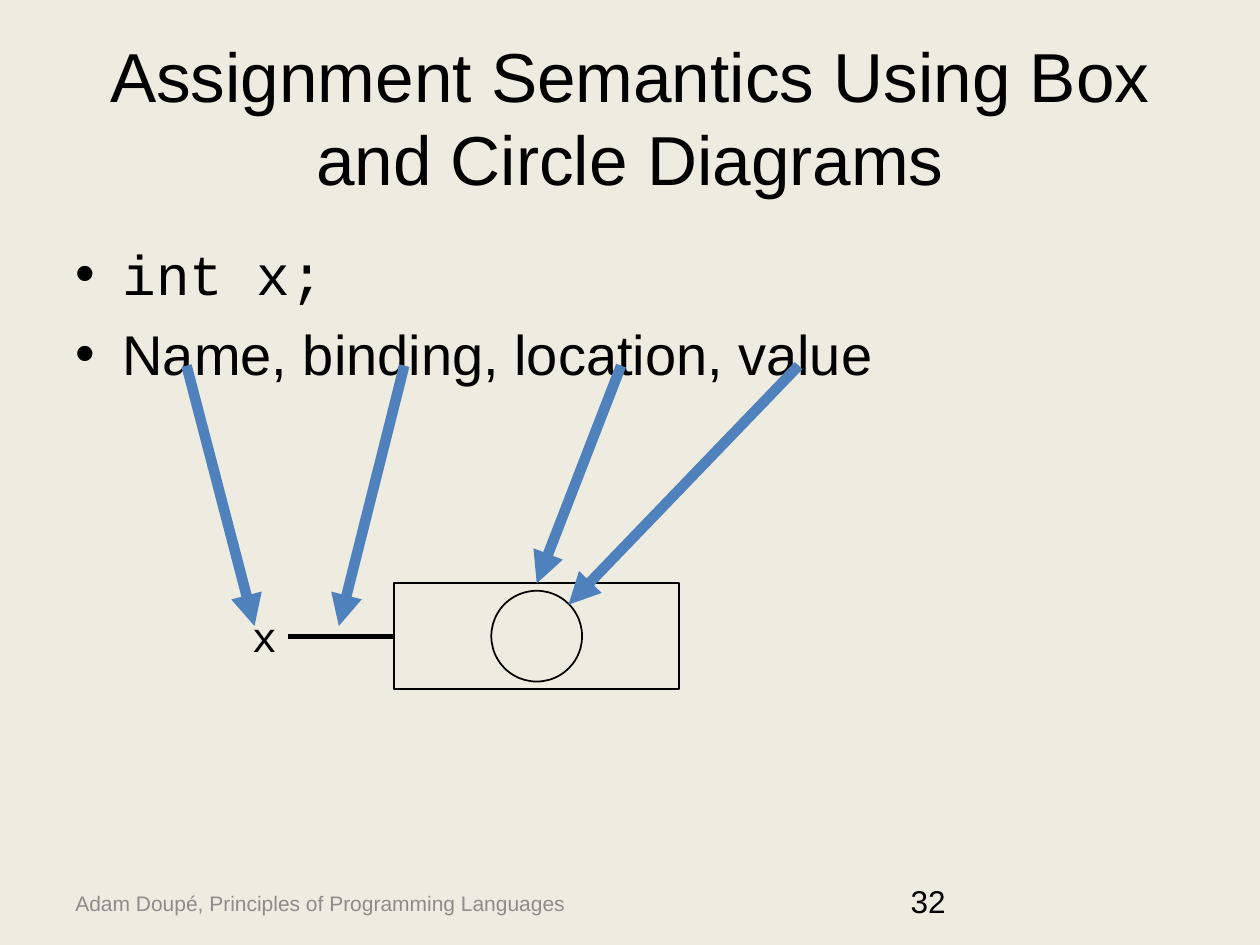
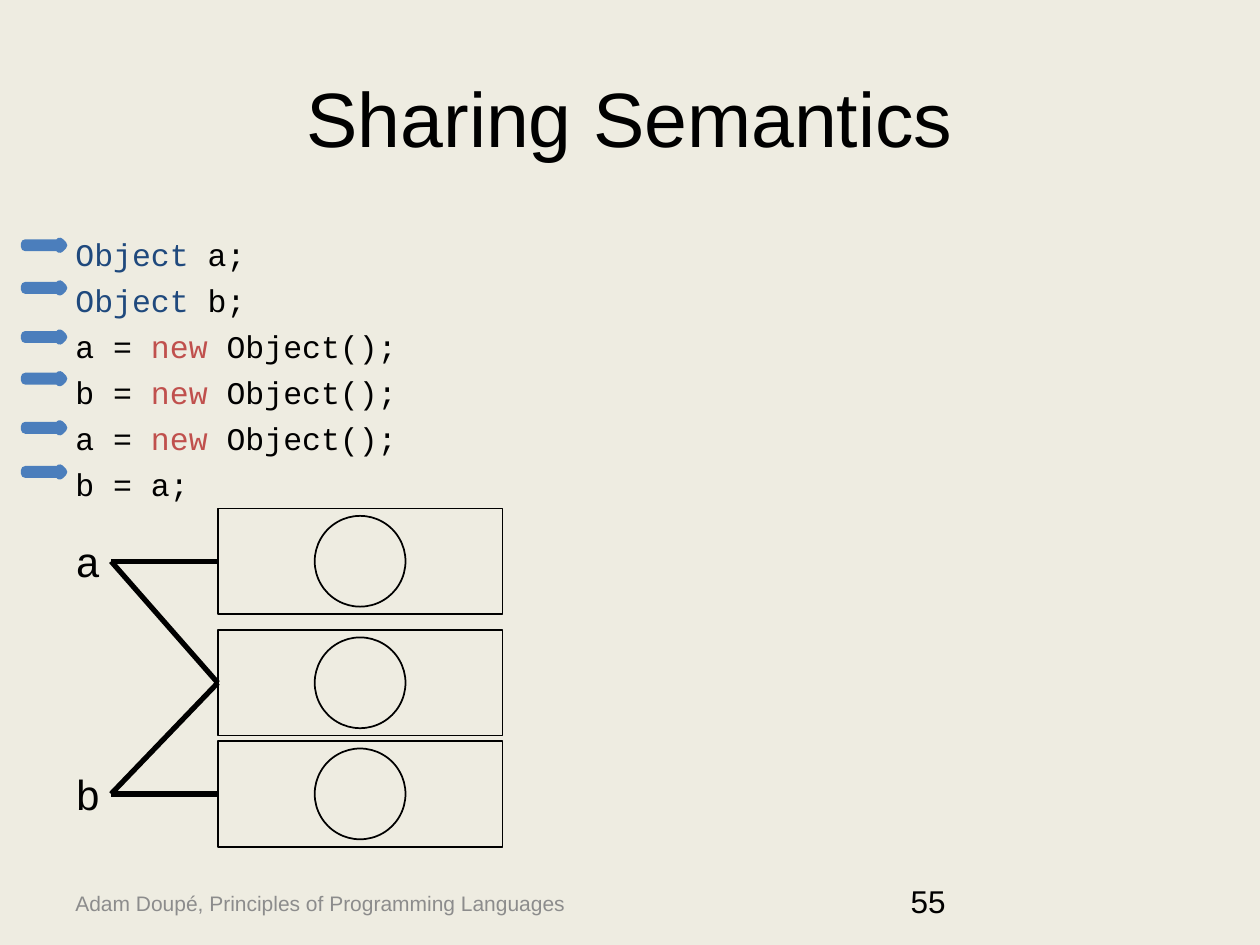
"""Build two lecture slides on assignment and sharing semantics."""
from lxml.etree import SubElement
from pptx import Presentation
from pptx.dml.color import RGBColor
from pptx.enum.shapes import MSO_CONNECTOR as Line, MSO_SHAPE as Shape
from pptx.enum.text import MSO_ANCHOR as Anchor, PP_ALIGN as Align
from pptx.oxml.ns import qn
from pptx.util import Cm, Pt

PAPER = RGBColor(0xEE, 0xEC, 0xE1)
BLACK = RGBColor(0x00, 0x00, 0x00)
GREY = RGBColor(0x8C, 0x8C, 0x8C)
NAVY = RGBColor(0x1F, 0x49, 0x7D)
RED = RGBColor(0xC0, 0x50, 0x4D)
BLUE = RGBColor(0x4F, 0x81, 0xBD)
MARKER_LINE = RGBColor(0x4B, 0x7E, 0xBC)
MARKER_STOPS = RGBColor(0x3F, 0x80, 0xCE), RGBColor(0xA4, 0xC4, 0xFF)
SANS, MONO = "Arial", "Courier New"

FOOTER = "Adam Doupé, Principles of Programming Languages"
TITLE_BOX = (1.27, 0.76, 22.86, 3.18)
FOOTER_BOX = (1.27, 17.7, 10.82, 1.02)
NUMBER_BOX = (18.11, 17.65, 5.92, 1.02)
BODY_LEFT, BODY_TOP, BODY_WIDTH = 1.27, 4.45, 22.86
BOX_W, BOX_H, CIRCLE = 5.74, 2.13, 1.83
LABEL_W, LABEL_H, LABEL_OFFSET = 0.97, 1.27, 3.12

NEW_OBJECT = [("new", RED), (" Object();", BLACK)]
SLIDES = [
    {
        "title": "Assignment Semantics Using Box and Circle Diagrams",
        "title_size": 39.6,
        "number": "32",
        "body": [(MONO, [("int x;", BLACK)]),
                 (SANS, [("Name, binding, location, value", BLACK)])],
        "body_size": 32, "body_gap": 7.2, "body_height": 12.57, "bullets": True,
        "box_left": 7.95,
        "box_tops": [11.76],
        "labels": {"x": 0},
        "links": [("x", 0)],
        "pointers": [((3.76, 7.37), (5.13, 12.62)), ((8.15, 7.37), (6.83, 12.62)),
                     ((12.52, 7.37), (10.82, 11.76)), ((16.1, 7.37), (11.46, 12.19))],
        "marker_tops": [],
    },
    {
        "title": "Sharing Semantics",
        "title_size": 44,
        "number": "55",
        "body": [(MONO, [("Object", NAVY), (" a;", BLACK)]),
                 (MONO, [("Object", NAVY), (" b;", BLACK)]),
                 (MONO, [("a = ", BLACK), *NEW_OBJECT]),
                 (MONO, [("b = ", BLACK), *NEW_OBJECT]),
                 (MONO, [("a = ", BLACK), *NEW_OBJECT]),
                 (MONO, [("b = a;", BLACK)])],
        "body_size": 18, "body_gap": 4.7, "body_height": 5.72, "bullets": False,
        "box_left": 4.39,
        "box_tops": [10.25, 12.7, 14.94],
        "labels": {"a": 0, "b": 2},
        "links": [("a", 0), ("a", 1), ("b", 1), ("b", 2)],
        "pointers": [],
        "marker_tops": [4.88, 5.74, 6.73, 7.57, 8.56, 9.45],
    },
]


def set_all(obj, **values):
    """Set each named attribute on an object."""
    for name, value in values.items():
        setattr(obj, name, value)


def add_run(p, text, size, font=SANS, color=BLACK):
    """Append a formatted run to a paragraph."""
    r = p.add_run()
    r.text = text
    set_all(r.font, size=Pt(size), name=font)
    r.font.color.rgb = color


def add_box(s, box, **frame):
    """Add an empty text box and return its text frame."""
    tf = s.shapes.add_textbox(*map(Cm, box)).text_frame
    set_all(tf, **{"word_wrap": True, **frame})
    return tf


def add_label(s, box, text, size, font=SANS, color=BLACK, **frame):
    """Add a text box holding one run."""
    add_run(add_box(s, box, **frame).paragraphs[0], text, size, font, color)


def add_bullet(p):
    """Give a paragraph a hanging round bullet."""
    pPr = p._p.get_or_add_pPr()
    set_all_xml = {"marL": Cm(0.95), "indent": -Cm(0.95)}
    for name, value in set_all_xml.items():
        pPr.set(name, str(value))
    SubElement(pPr, qn("a:buFont")).set("typeface", SANS)
    SubElement(pPr, qn("a:buChar")).set("char", "•")


def add_title(s, text, size):
    """Place and format the title placeholder."""
    sp = s.shapes.title
    left, top, width, height = map(Cm, TITLE_BOX)
    set_all(sp, left=left, top=top, width=width, height=height)
    tf = sp.text_frame
    set_all(tf, vertical_anchor=Anchor.MIDDLE, word_wrap=True)
    p = tf.paragraphs[0]
    p.alignment = Align.CENTER
    add_run(p, text, size)


def add_body(s, slide):
    """Add the statements or bullet points below the title."""
    gap = Pt(slide["body_gap"])
    tf = add_box(s, (BODY_LEFT, BODY_TOP + gap.cm, BODY_WIDTH, slide["body_height"]))
    for i, (font, runs) in enumerate(slide["body"]):
        p = tf.add_paragraph() if i else tf.paragraphs[0]
        if i:
            p.space_before = gap
        if slide["bullets"]:
            add_bullet(p)
        for text, color in runs:
            add_run(p, text, slide["body_size"], font, color)


def add_line(s, start, end, color, width, arrow=False):
    """Add a straight line, with an arrowhead at its end if wanted."""
    sp = s.shapes.add_connector(Line.STRAIGHT, *map(Cm, (*start, *end)))
    sp.line.color.rgb = color
    sp.line.width = Pt(width)
    if arrow:
        SubElement(sp.line._get_or_add_ln(), qn("a:tailEnd")).set("type", "triangle")
    SubElement(sp._element.spPr, qn("a:effectLst"))


def add_shape(s, kind, box, color=BLACK, width=1):
    """Add an unfilled outlined preset shape."""
    sp = s.shapes.add_shape(kind, *map(Cm, box))
    sp.shadow.inherit = False
    sp.fill.background()
    sp.line.color.rgb = color
    sp.line.width = Pt(width)
    return sp


def add_location(s, left, top):
    """Add a memory box with a value circle in its centre."""
    add_shape(s, Shape.RECTANGLE, (left, top, BOX_W, BOX_H))
    add_shape(s, Shape.OVAL, (left + (BOX_W - CIRCLE) / 2, top + (BOX_H - CIRCLE) / 2,
                              CIRCLE, CIRCLE))


def add_marker(s, top):
    """Add a small gradient arrow beside a statement."""
    sp = add_shape(s, Shape.RIGHT_ARROW, (0.51, top, 0.76, 0.13), MARKER_LINE, 5)
    sp.fill.gradient()
    sp.fill.gradient_angle = 90
    for stop, color in zip(sp.fill.gradient_stops, MARKER_STOPS):
        stop.color.rgb = color


def add_diagram(s, slide):
    """Draw names, bindings, locations and values."""
    left = slide["box_left"]
    label_left = left - LABEL_OFFSET
    middles = [top + BOX_H / 2 for top in slide["box_tops"]]
    for top in slide["box_tops"]:
        add_location(s, left, top)
    for name, row in slide["labels"].items():
        box = (label_left, middles[row] - LABEL_H / 2, LABEL_W, LABEL_H)
        add_label(s, box, name, 24, MONO, word_wrap=False)
    for name, row in slide["links"]:
        start = (label_left + LABEL_W, middles[slide["labels"][name]])
        add_line(s, start, (left, middles[row]), BLACK, 3)
    for start, end in slide["pointers"]:
        add_line(s, start, end, BLUE, 6, arrow=True)
    for top in slide["marker_tops"]:
        add_marker(s, top)


def main():
    """Build and save the presentation."""
    prs = Presentation()
    set_all(prs, slide_width=Cm(25.4), slide_height=Cm(19.05))
    fill = prs.slide_master.background.fill
    fill.solid()
    fill.fore_color.rgb = PAPER
    for slide in SLIDES:
        s = prs.slides.add_slide(prs.slide_layouts.get_by_name("Title Only"))
        add_label(s, FOOTER_BOX, FOOTER, 12, color=GREY, vertical_anchor=Anchor.MIDDLE)
        add_title(s, slide["title"], slide["title_size"])
        add_body(s, slide)
        add_label(s, NUMBER_BOX, slide["number"], 18)
        add_diagram(s, slide)
    prs.save("out.pptx")


if __name__ == "__main__":
    main()
